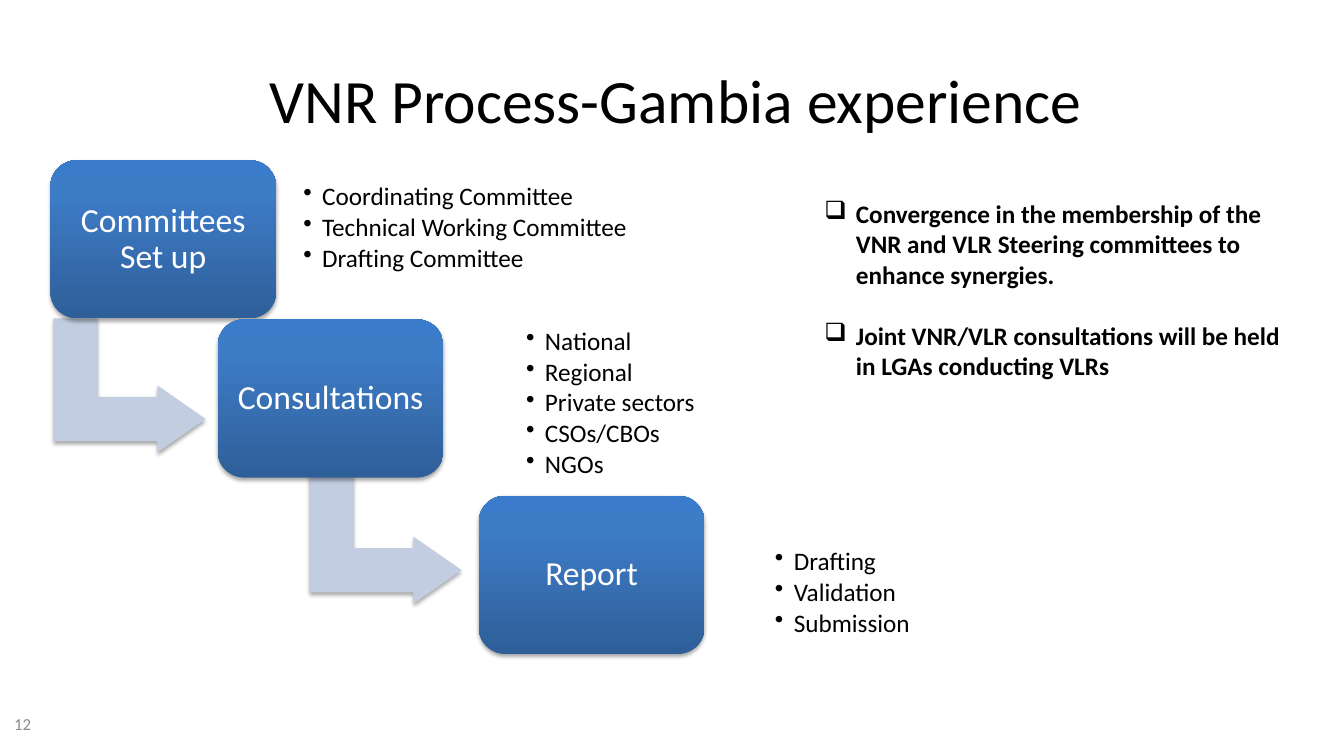
from copy import deepcopy

from lxml.etree import SubElement
from pptx import Presentation
from pptx.dml.color import RGBColor
from pptx.enum.shapes import MSO_SHAPE as Shape
from pptx.enum.text import MSO_ANCHOR as Anchor, PP_ALIGN as Align
from pptx.oxml.ns import qn
from pptx.util import Pt

COLORS = {
    "text": "000000",
    "number": "8C8C8C",
    "label": "FFFFFF",
    "arrow": "C2CDE1",
    "box_bottom": "2F5F99",
    "box_middle": "3D7CC7",
    "box_top": "3A7CCB",
}
BOX_SIZE = (161.3, 113)
ARROW_SIZE = (95.8, 108.7)
STEPS = [
    ("Committees Set up", (36, 114.5), (44.6, 221), (211.7, 123, 302.4, 80),
     ["Coordinating Committee", "Technical Working Committee", "Drafting Committee"]),
    ("Consultations", (155.5, 228.2), (227.5, 329), (370.8, 252, 253.4, 72.7),
     ["National", "Regional", "Private sectors", "CSOs/CBOs", "NGOs"]),
    ("Report", (342, 354.2), None, (548.6, 378, 170.6, 91.4),
     ["Drafting", "Validation", "Submission"]),
]
REMARKS = [
    "Convergence in the membership of the VNR and VLR Steering committees to enhance synergies.",
    "Joint VNR/VLR consultations will be held in LGAs conducting VLRs",
]


class SlideBuilder:
    """Holds the text style and the current slide, and adds each kind of element."""

    font = "Calibri"

    def __init__(self, presentation):
        self.slide = presentation.slides.add_slide(presentation.slide_layouts[5])

    def color(self, name):
        return RGBColor.from_string(COLORS[name])

    def style(self, paragraph, size, color="text", bold=False):
        for run in paragraph.runs:
            run.font.name = self.font
            run.font.size = Pt(size)
            run.font.bold = bold
            run.font.color.rgb = self.color(color)

    def title(self, text, *frame):
        shape = self.slide.shapes.title
        shape.left, shape.top, shape.width, shape.height = map(Pt, frame)
        shape.text_frame.text = text
        shape.text_frame.vertical_anchor = Anchor.MIDDLE
        paragraph = shape.text_frame.paragraphs[0]
        paragraph.alignment = Align.CENTER
        self.style(paragraph, 44)

    def text_box(self, text, frame, anchor=Anchor.MIDDLE):
        text_frame = self.slide.shapes.add_textbox(*map(Pt, frame)).text_frame
        text_frame.word_wrap = True
        text_frame.vertical_anchor = anchor
        text_frame.text = text
        return text_frame

    def page_number(self, text, *frame):
        text_frame = self.text_box(text, frame)
        self.style(text_frame.paragraphs[0], 12, "number")

    def bullet(self, paragraph, character, indent):
        properties = paragraph._p.get_or_add_pPr()
        properties.set("marL", str(Pt(indent)))
        properties.set("indent", str(-Pt(indent)))
        SubElement(properties, qn("a:buChar"), char=character)

    def step_list(self, items, frame):
        text_frame = self.text_box("\n".join(items), frame)
        text_frame.margin_left = text_frame.margin_right = Pt(5)
        text_frame.margin_top = text_frame.margin_bottom = Pt(5)
        for paragraph in text_frame.paragraphs:
            self.bullet(paragraph, "•", 13.5)
            paragraph.line_spacing = 0.9
            paragraph.space_after = Pt(2.5)
            self.style(paragraph, 18)

    def remarks(self, items, *frame):
        text_frame = self.text_box("\n".join(items), frame, Anchor.TOP)
        for index, paragraph in enumerate(text_frame.paragraphs):
            self.bullet(paragraph, "❑", 22.5)
            if index:
                paragraph.space_before = Pt(22)
            self.style(paragraph, 18, bold=True)

    def shadow(self, shape):
        shape.shadow.inherit = False
        effects = shape.element.spPr.find(qn("a:effectLst"))
        outer = SubElement(effects, qn("a:outerShdw"), blurRad=str(Pt(3.1)),
                           dist=str(Pt(1.8)), dir="5400000", rotWithShape="0")
        black = SubElement(outer, qn("a:srgbClr"), val="000000")
        SubElement(black, qn("a:alpha"), val="35000")

    def arrow(self, position):
        shape = self.slide.shapes.add_shape(
            Shape.BENT_UP_ARROW, *map(Pt, position + ARROW_SIZE))
        shape.rotation = 90
        for index, value in enumerate((0.33, 0.25, 0.36)):
            shape.adjustments[index] = value
        shape.fill.solid()
        shape.fill.fore_color.rgb = self.color("arrow")
        shape.line.fill.background()
        self.shadow(shape)

    def step_box(self, text, position):
        shape = self.slide.shapes.add_shape(
            Shape.ROUNDED_RECTANGLE, *map(Pt, position + BOX_SIZE))
        shape.fill.gradient()
        shape.fill.gradient_angle = 90
        stop_list = shape.element.spPr.find(".//" + qn("a:gsLst"))
        stop_list.append(deepcopy(stop_list[-1]))
        stops = zip(shape.fill.gradient_stops, (0, 0.8, 1),
                    ("box_bottom", "box_middle", "box_top"))
        for stop, place, color in stops:
            stop.position = place
            stop.color.rgb = self.color(color)
        shape.line.fill.background()
        self.shadow(shape)
        text_frame = shape.text_frame
        text_frame.word_wrap = True
        text_frame.vertical_anchor = Anchor.MIDDLE
        text_frame.margin_left = text_frame.margin_right = Pt(7)
        text_frame.text = text
        paragraph = text_frame.paragraphs[0]
        paragraph.alignment = Align.CENTER
        paragraph.line_spacing = 0.9
        self.style(paragraph, 24, "label")


def main():
    presentation = Presentation()
    presentation.slide_width, presentation.slide_height = Pt(960), Pt(540)
    builder = SlideBuilder(presentation)
    builder.title("VNR Process-Gambia experience", 54, 30, 858, 81.5)
    builder.page_number("12", 3, 502.5, 224, 28.8)
    for label, box, arrow, list_frame, items in STEPS:
        if arrow:
            builder.arrow(arrow)
        builder.step_box(label, box)
        builder.step_list(items, list_frame)
    builder.remarks(REMARKS, 581.8, 138.2, 347.8, 181.4)
    presentation.save("out.pptx")


if __name__ == "__main__":
    main()
